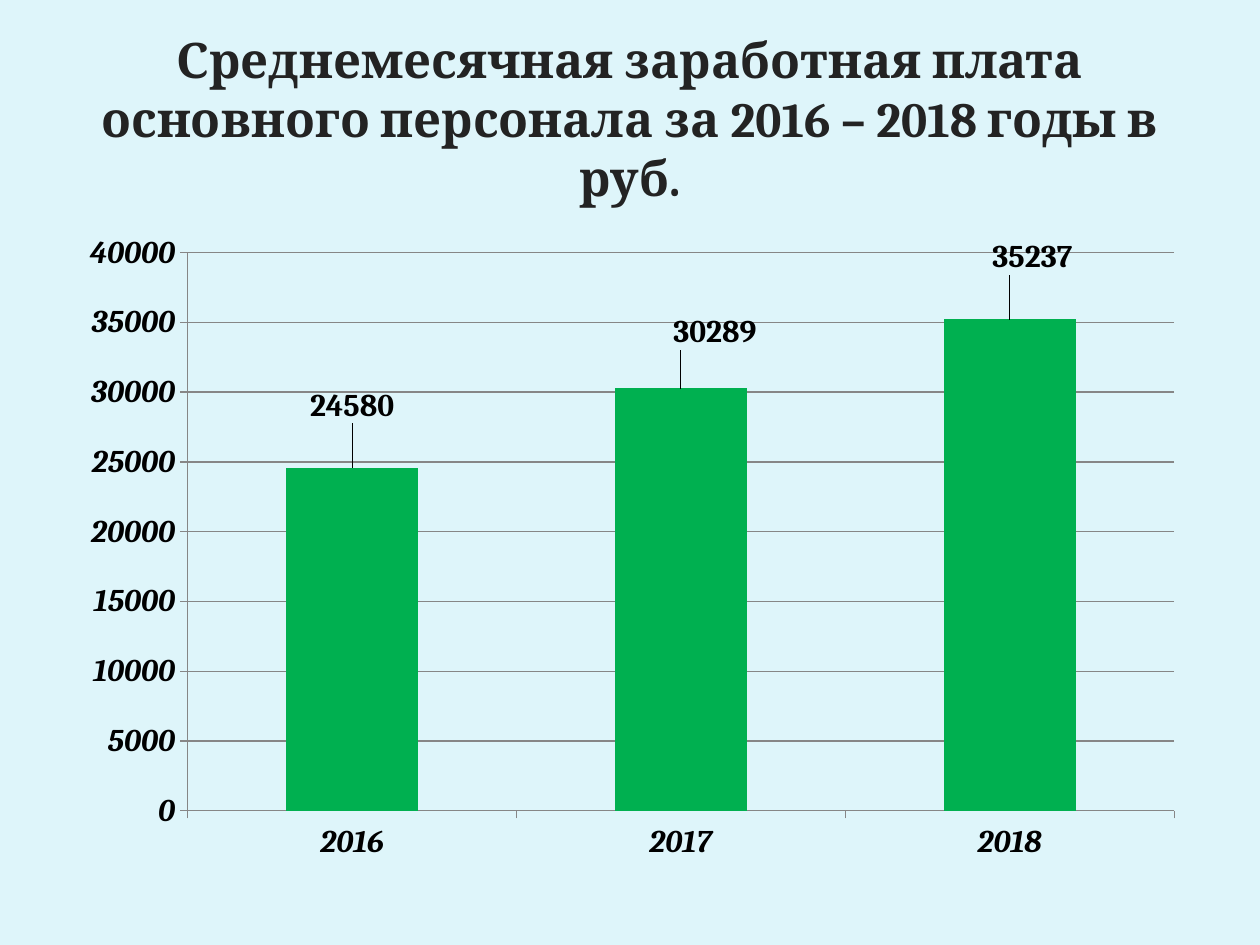
from lxml import etree
from pptx import Presentation
from pptx import util as u
from pptx.chart.data import CategoryChartData
from pptx.dml.color import RGBColor
from pptx.enum import chart as ch, text
from pptx.oxml import parse_xml
from pptx.oxml.ns import nsdecls

COLOURS = {"background": "DEF5FA", "title": "232323", "text": "000000",
           "bar": "00B050", "line": "868686"}
FONT = "Cambria"
WIDTH, HEIGHT = u.Inches(10), u.Inches(7.5)
SALARIES = {"2016": 24580, "2017": 30289, "2018": 35237}
# Label shifts from the bar tops, as shares of the chart's size
LABEL_SHIFTS = [(0, -0.06), (0.03, -0.05), (0.02, -0.06)]
PLOT_AREA = {"x": 0.11, "y": 0.05, "w": 0.87, "h": 0.86}


def colour(name):
    return RGBColor.from_string(COLOURS[name])


def share_box(left, top, width, height):
    """Turn shares of the slide into lengths."""
    return (int(left * WIDTH), int(top * HEIGHT),
            int(width * WIDTH), int(height * HEIGHT))


def style_font(font, size, name, bold=True, italic=False):
    font.name, font.size = FONT, u.Pt(size)
    font.bold, font.italic = bold, italic
    font.color.rgb = colour(name)


def style_line(line):
    line.color.rgb = colour("line")
    line.width = u.Pt(0.75)


def manual_layout(modes, **shares):
    parts = "".join(f'<c:{tag} val="{value}"/>'
                    for tag, value in {**modes, **shares}.items())
    return parse_xml(f'<c:layout {nsdecls("c")}><c:manualLayout>{parts}'
                     '</c:manualLayout></c:layout>')


def add_title(page, box, wording):
    title = page.shapes.title
    title.left, title.top, title.width, title.height = box
    frame = title.text_frame
    frame.text = wording
    frame.word_wrap = True
    frame.vertical_anchor = text.MSO_ANCHOR.MIDDLE
    para = frame.paragraphs[0]
    para.alignment = text.PP_ALIGN.CENTER
    style_font(para.runs[0].font, 28, "title")


def style_axis(axis):
    style_font(axis.tick_labels.font, 18, "text", italic=True)
    style_line(axis.format.line)
    axis.major_tick_mark = ch.XL_TICK_MARK.OUTSIDE
    axis.minor_tick_mark = ch.XL_TICK_MARK.NONE


def place_plot(chart):
    area = chart.plots[0]._element.getparent()
    for old in area.findall("{*}layout"):
        area.remove(old)
    modes = {"layoutTarget": "inner", "xMode": "edge", "yMode": "edge"}
    area.insert(0, manual_layout(modes, **PLOT_AREA))


def add_labels(plot):
    plot.has_data_labels = True
    plot.data_labels.show_value = True
    style_font(plot.data_labels.font, 18, "text")
    series = plot.series[0]
    for index, (x, y) in enumerate(LABEL_SHIFTS):
        label = series.points[index].data_label
        style_font(label.font, 18, "text")
        label.position = ch.XL_LABEL_POSITION.OUTSIDE_END
    for element, (x, y) in zip(series._element.iter("{*}dLbl"), LABEL_SHIFTS):
        element.find("{*}idx").addnext(manual_layout({}, x=x, y=y))


def add_salary_chart(page, box):
    data = CategoryChartData()
    data.categories = list(SALARIES)
    data.add_series("Series 1", list(SALARIES.values()))
    chart = page.shapes.add_chart(
        ch.XL_CHART_TYPE.COLUMN_CLUSTERED, *box, data).chart
    chart.has_legend = chart.has_title = False
    style_font(chart.font, 18, "text", bold=False)

    # Axes and gridlines
    values = chart.value_axis
    for axis in (chart.category_axis, values):
        style_axis(axis)
    values.minimum_scale, values.maximum_scale = 0, 40000
    values.major_unit = 5000
    values.has_major_gridlines = True
    style_line(values.major_gridlines.format.line)

    # Bars and their values
    plot = chart.plots[0]
    plot.gap_width = 150
    plot.vary_by_categories = False
    fill = plot.series[0].format.fill
    fill.solid()
    fill.fore_color.rgb = colour("bar")
    add_labels(plot)
    place_plot(chart)


def main():
    deck = Presentation()
    deck.slide_width, deck.slide_height = WIDTH, HEIGHT
    page = deck.slides.add_slide(deck.slide_layouts[5])
    page.background.fill.solid()
    page.background.fill.fore_color.rgb = colour("background")
    add_title(page, share_box(0.05, 0.04, 0.9, 0.17),
              "Среднемесячная заработная плата основного персонала "
              "за 2016 – 2018 годы в руб.")
    add_salary_chart(page, share_box(0.05, 0.233, 0.9, 0.687))
    deck.save("out.pptx")


if __name__ == "__main__":
    main()
